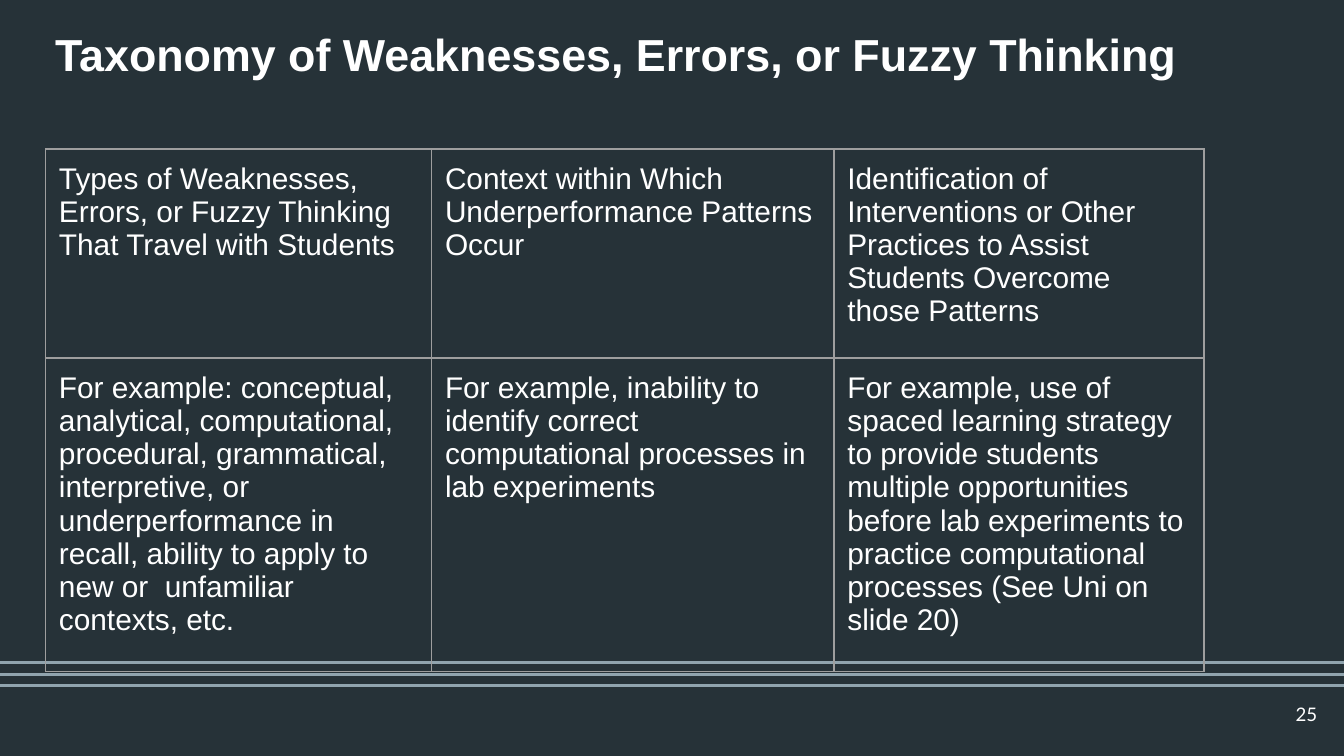
from lxml import etree
from pptx import Presentation
from pptx.dml.color import RGBColor
from pptx.enum.shapes import MSO_CONNECTOR as CONN
from pptx.enum.text import MSO_ANCHOR as ANCHOR, PP_ALIGN as ALIGN
from pptx.oxml.ns import qn
from pptx.util import Pt

COLORS = {"background": "263238", "rule": "90A4AE", "border": "9E9E9E", "text": "FFFFFF"}
WIDTH, HEIGHT = 720, 405


def write(tf, text, size, font="Arial", bold=False, align=ALIGN.LEFT,
          anchor=ANCHOR.TOP, spacing=None):
    tf.word_wrap = True
    tf.vertical_anchor = anchor
    p = tf.paragraphs[0]
    p.alignment = align
    p.line_spacing = spacing
    r = p.add_run()
    r.text = text
    r.font.size, r.font.name, r.font.bold = Pt(size), font, bold
    r.font.color.rgb = RGBColor.from_string(COLORS["text"])


def add_box(left, top, width, height):
    """Add a text box with narrow margins and return its text frame."""
    tf = s.shapes.add_textbox(Pt(left), Pt(top), Pt(width), Pt(height)).text_frame
    tf.margin_left = tf.margin_right = Pt(5)
    tf.margin_top = tf.margin_bottom = Pt(3)
    return tf


prs = Presentation()
prs.slide_width, prs.slide_height = Pt(WIDTH), Pt(HEIGHT)
s = prs.slides.add_slide(prs.slide_layouts[6])
s.background.fill.solid()
s.background.fill.fore_color.rgb = RGBColor.from_string(COLORS["background"])

# Footer rules
for y in (355, 361.2, 367.2):
    line = s.shapes.add_connector(CONN.STRAIGHT, Pt(0), Pt(y), Pt(WIDTH), Pt(y))
    line.line.color.rgb = RGBColor.from_string(COLORS["rule"])
    line.line.width = Pt(1.5)
    etree.SubElement(line._element.spPr, qn("a:effectLst"))

# Title
write(add_box(24.6, 7.2, 695.4, 55.4), "Taxonomy of Weaknesses, Errors, or Fuzzy Thinking",
      size=24, bold=True, spacing=1.15)

# Table
col_widths = [206.8, 215.6, 198.2]
row_heights = [112, 157]
rows = [
    ["Types of Weaknesses, Errors, or Fuzzy Thinking That Travel with Students",
     "Context within Which Underperformance Patterns Occur",
     "Identification of Interventions or Other Practices to Assist Students Overcome "
     "those Patterns"],
    ["For example: conceptual, analytical, computational, procedural, grammatical, "
     "interpretive, or underperformance in recall, ability to apply to new or  unfamiliar "
     "contexts, etc.",
     "For example, inability to identify correct computational processes in lab experiments",
     "For example, use of spaced learning strategy to provide students multiple "
     "opportunities before lab experiments to practice computational processes "
     "(See Uni on slide 20)"],
]
table = s.shapes.add_table(len(rows), len(col_widths), Pt(24.4), Pt(79.8),
                           Pt(sum(col_widths)), Pt(sum(row_heights))).table
table.first_row = table.horz_banding = False
for col, width in zip(table.columns, col_widths):
    col.width = Pt(width)
for row, height, texts in zip(table.rows, row_heights, rows):
    row.height = Pt(height)
    for cell, text in zip(row.cells, texts):
        cell.margin_left = cell.margin_right = Pt(7.2)
        cell.margin_top = cell.margin_bottom = Pt(7.2)
        write(cell.text_frame, text, size=16)
        tc_pr = cell._tc.get_or_add_tcPr()
        for side in ("a:lnL", "a:lnR", "a:lnT", "a:lnB"):
            ln = etree.SubElement(tc_pr, qn(side), w=str(Pt(0.75)))
            fill = etree.SubElement(ln, qn("a:solidFill"))
            etree.SubElement(fill, qn("a:srgbClr"), val=COLORS["border"])
        cell.fill.background()

# Slide number
write(add_box(667.4, 367.2, 43.2, 31), "25", size=10, font="Lato",
      align=ALIGN.RIGHT, anchor=ANCHOR.MIDDLE)

prs.save("out.pptx")
